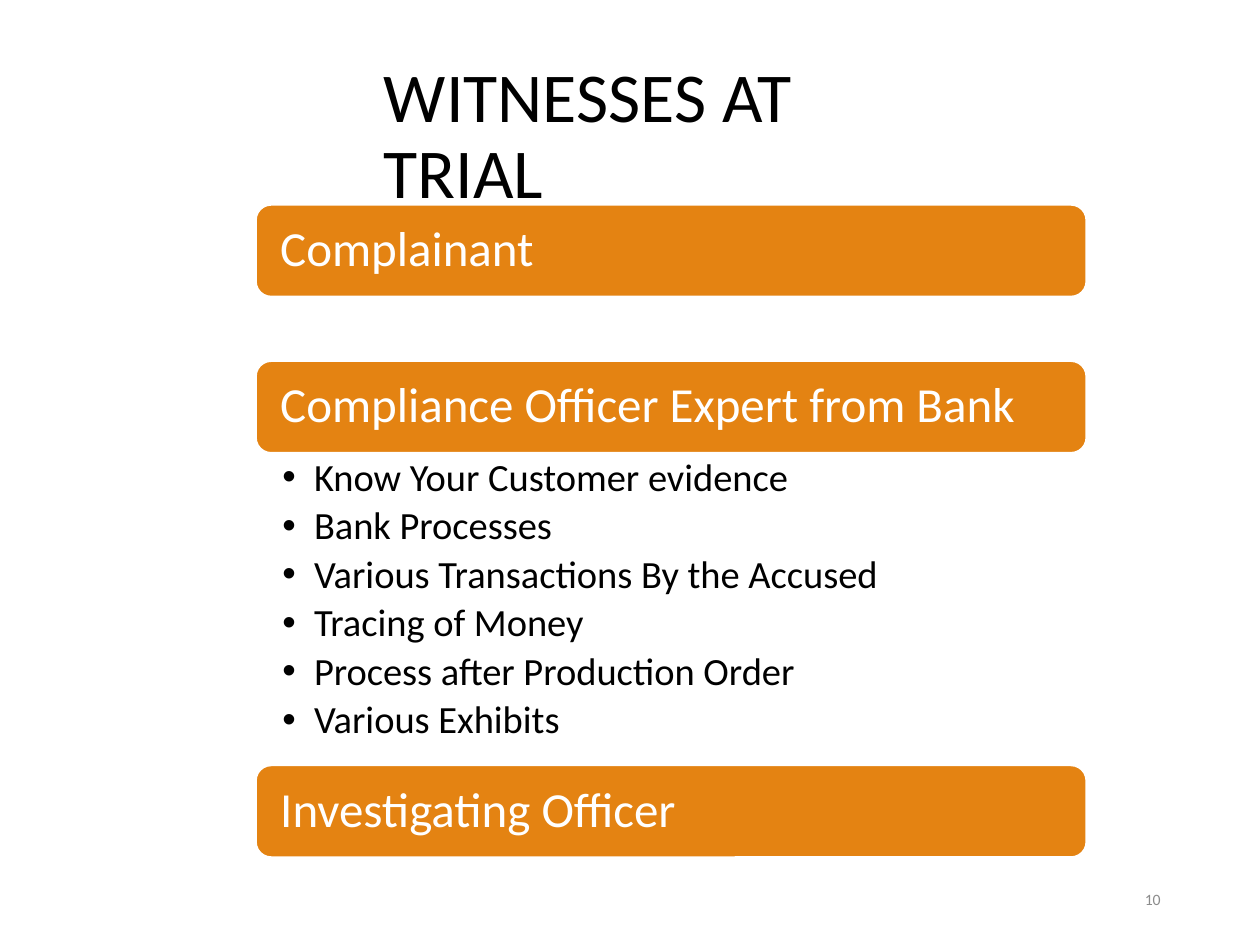
from pptx import Presentation
from pptx.dml.color import RGBColor
from pptx.enum.shapes import MSO_SHAPE as Kind
from pptx.enum.text import MSO_ANCHOR as Anchor, MSO_AUTO_SIZE as Fit, PP_ALIGN as Align
from pptx.util import Cm, Pt

TITLE = "WITNESSES AT TRIAL"
BARS = [
    ("Complainant", 4.13),
    ("Compliance Officer Expert from Bank", 7.28),
    ("Investigating Officer", 15.43),
]
ITEMS = [
    "Know Your Customer evidence",
    "Bank Processes",
    "Various Transactions By the Accused",
    "Tracing of Money",
    "Process after Production Order",
    "Various Exhibits",
]
NUMBER = "10"
LEFT, WIDTH, HIGH = 5.16, 16.74, 1.85
BLACK, WHITE, ORANGE, GREY = "000000", "FFFFFF", "E48312", "8C8C8C"


def color(target, code):
    target.rgb = RGBColor.from_string(code)


def place(shape, *box):
    shape.left, shape.top, shape.width, shape.height = map(Cm, box)


def write(shape, lines, size, code, anchor=Anchor.TOP, align=Align.LEFT,
          before=0, after=0, pads=(0.25, 0.13, 0.25, 0.13)):
    frame = shape.text_frame
    frame.text = "\n".join(lines)
    frame.word_wrap = True
    frame.auto_size = Fit.NONE
    frame.vertical_anchor = anchor
    (frame.margin_left, frame.margin_top,
     frame.margin_right, frame.margin_bottom) = map(Cm, pads)
    for par in frame.paragraphs:
        par.alignment = align
        par.line_spacing = 0.9
        par.space_before, par.space_after = Pt(before), Pt(after)
        par.font.name, par.font.size = "Calibri", Pt(size)
        color(par.font.color, code)


def add_bar(slide, label, top):
    bar = slide.shapes.add_shape(
        Kind.ROUNDED_RECTANGLE, Cm(LEFT), Cm(top), Cm(WIDTH), Cm(HIGH))
    bar.shadow.inherit = False
    bar.fill.solid()
    color(bar.fill.fore_color, ORANGE)
    color(bar.line.color, WHITE)
    bar.line.width = Pt(1)
    write(bar, [label], 28, WHITE, Anchor.MIDDLE, pads=(0.4, 0.3, 0.4, 0.3))


def main():
    deck = Presentation()
    deck.slide_width, deck.slide_height = Cm(25.4), Cm(19.05)
    slide = deck.slides.add_slide(deck.slide_layouts[1])

    title, body = slide.placeholders
    place(title, 7.49, 1.12, 9.6, 3.38)
    write(title, [TITLE], 40, BLACK, before=7.5)

    for label, top in BARS:
        add_bar(slide, label, top)

    place(body, LEFT, BARS[1][1] + HIGH, WIDTH, 6.27)
    write(body, ITEMS, 22, BLACK, after=4, pads=(0.53, 0.1, 0.56, 0.1))
    for par in body.text_frame.paragraphs:
        props = par._p.get_or_add_pPr()
        props.set("marL", str(Cm(0.64)))
        props.set("indent", str(Cm(-0.64)))

    page = slide.shapes.add_textbox(Cm(17.93), Cm(17.65), Cm(5.72), Cm(1.02))
    write(page, [NUMBER], 9, GREY, Anchor.MIDDLE, Align.RIGHT)
    deck.save("out.pptx")


if __name__ == "__main__":
    main()
